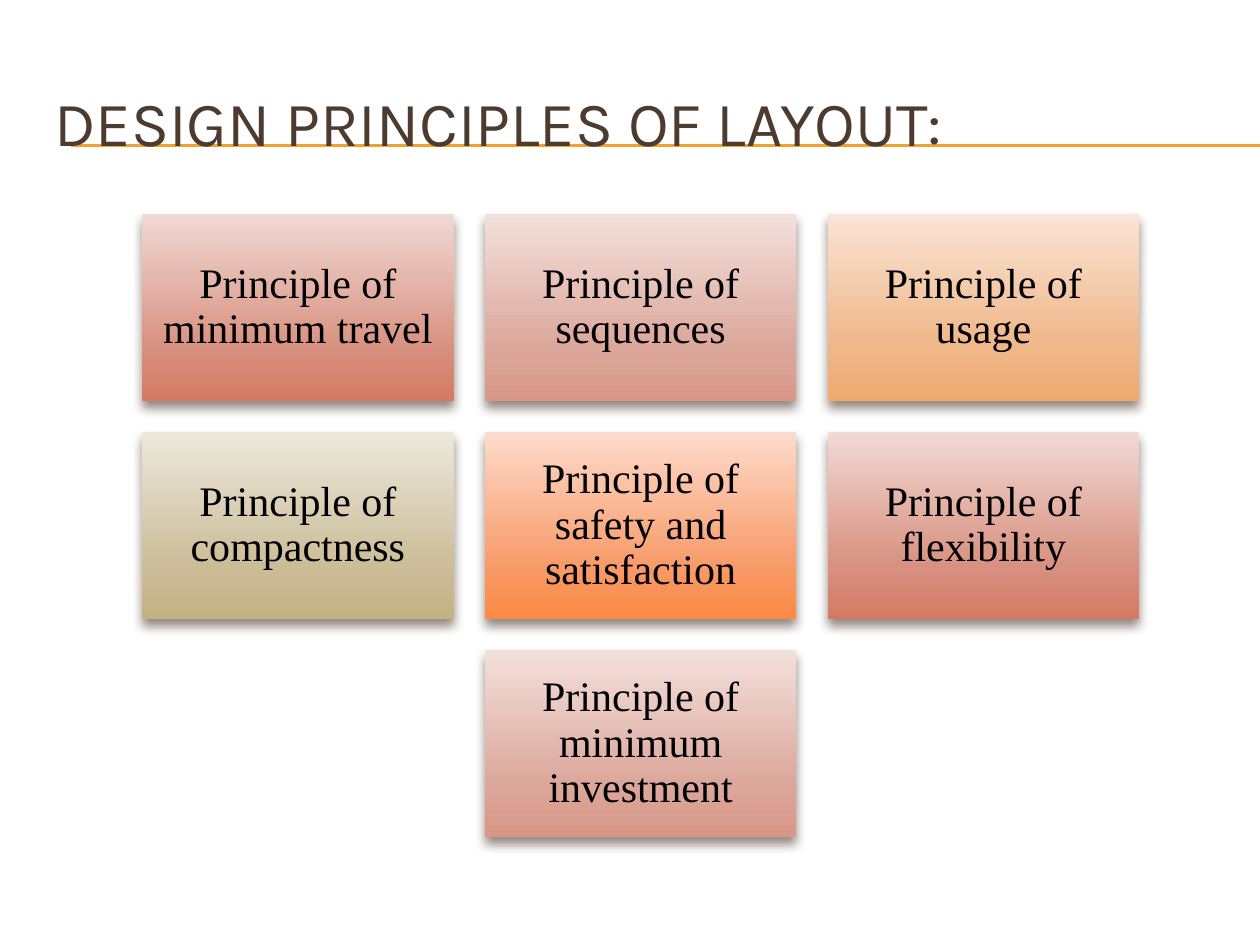
"""Build a slide with the design principles of layout as a grid of cards."""
from copy import deepcopy
from typing import NamedTuple

from lxml.etree import SubElement
from pptx import Presentation
from pptx.dml.color import RGBColor
from pptx.enum.shapes import MSO_CONNECTOR, MSO_SHAPE
from pptx.enum.text import MSO_ANCHOR, PP_ALIGN
from pptx.oxml.ns import qn
from pptx.slide import Slide
from pptx.util import Inches, Pt

COLORS = {"title": "4E3B30", "rule": "F0A22E", "text": "000000", "shadow": "4E3B30"}
FADES = {
    "red": ("F1D9D4", "D89180", "D47A62"),
    "rose": ("F3E0DB", "DCA79B", "D89787"),
    "amber": ("FAE4D5", "EFB688", "EFAA6F"),
    "sand": ("EDE8DC", "CCBD99", "C4B284"),
    "orange": ("FDDBCC", "F89B69", "FC8A43"),
}
STOPS = (0, 0.72, 1)
LEFT, TOP = 1.13, 1.7
WIDTH, HEIGHT, GAP = 2.47, 1.48, 0.25


class Card(NamedTuple):
    """A principle, its place in the grid and its fade."""

    text: str
    row: int
    col: int
    fade: str


CARDS = (
    Card("Principle of minimum travel", 0, 0, "red"),
    Card("Principle of sequences", 0, 1, "rose"),
    Card("Principle of usage", 0, 2, "amber"),
    Card("Principle of compactness", 1, 0, "sand"),
    Card("Principle of safety and satisfaction", 1, 1, "orange"),
    Card("Principle of flexibility", 1, 2, "red"),
    Card("Principle of minimum investment", 2, 1, "rose"),
)


def color(name: str) -> RGBColor:
    """Return a named colour."""
    return RGBColor.from_string(COLORS[name])


def add_title(slide: Slide, text: str) -> None:
    """Place and format the title."""
    title = slide.shapes.title
    title.left, title.top = Inches(0.33), Inches(0.5)
    title.width, title.height = Inches(9.5), Inches(0.92)
    frame = title.text_frame
    frame.text = text
    frame.vertical_anchor = MSO_ANCHOR.MIDDLE
    par = frame.paragraphs[0]
    par.alignment = PP_ALIGN.LEFT
    par.font.name, par.font.size = "Karla", Pt(36)
    par.font.color.rgb = color("title")


def add_rule(slide: Slide, y: float) -> None:
    """Draw a rule behind the title."""
    rule = slide.shapes.add_connector(
        MSO_CONNECTOR.STRAIGHT, Inches(0.56), Inches(y), Inches(10), Inches(y)
    )
    rule.line.color.rgb = color("rule")
    rule.line.width = Pt(0.75)
    SubElement(rule.element.spPr, qn("a:effectLst"))
    slide.shapes.title.element.addprevious(rule.element)


def add_card(slide: Slide, card: Card) -> None:
    """Draw one card with its fade, shadow and text."""
    box = slide.shapes.add_shape(
        MSO_SHAPE.RECTANGLE,
        Inches(LEFT + card.col * (WIDTH + GAP)),
        Inches(TOP + card.row * (HEIGHT + GAP)),
        Inches(WIDTH),
        Inches(HEIGHT),
    )
    box.line.fill.background()
    box.fill.gradient()
    box.fill.gradient_angle = 270
    fade = box.element.spPr.find(".//" + qn("a:gsLst"))
    fade.insert(1, deepcopy(fade[0]))
    for stop, place, shade in zip(box.fill.gradient_stops, STOPS, FADES[card.fade]):
        stop.position = place
        stop.color.rgb = RGBColor.from_string(shade)
    add_shadow(box)

    frame = box.text_frame
    frame.text = card.text
    frame.word_wrap = True
    frame.vertical_anchor = MSO_ANCHOR.MIDDLE
    frame.margin_left = frame.margin_right = Inches(0.1)
    frame.margin_top = frame.margin_bottom = Inches(0.1)
    par = frame.paragraphs[0]
    par.alignment, par.line_spacing = PP_ALIGN.CENTER, 0.9
    par.font.name, par.font.size = "Times New Roman", Pt(24)
    par.font.color.rgb = color("text")


def add_shadow(box) -> None:
    """Give a box a soft shadow below it."""
    box.shadow.inherit = False
    glow = SubElement(
        box.element.spPr.find(qn("a:effectLst")),
        qn("a:outerShdw"),
        blurRad=str(Pt(6)),
        dist=str(Pt(4)),
        dir="5400000",
        rotWithShape="0",
    )
    tone = SubElement(glow, qn("a:srgbClr"), val=COLORS["shadow"])
    SubElement(tone, qn("a:alpha"), val="60000")


def main() -> None:
    """Build and save the slide."""
    deck = Presentation()
    deck.slide_width, deck.slide_height = Inches(10), Inches(7.5)
    slide = deck.slides.add_slide(deck.slide_layouts[5])
    add_title(slide, "DESIGN PRINCIPLES OF LAYOUT:")
    for y in (1.15, 1.16):
        add_rule(slide, y)
    for card in CARDS:
        add_card(slide, card)
    deck.save("out.pptx")


if __name__ == "__main__":
    main()
